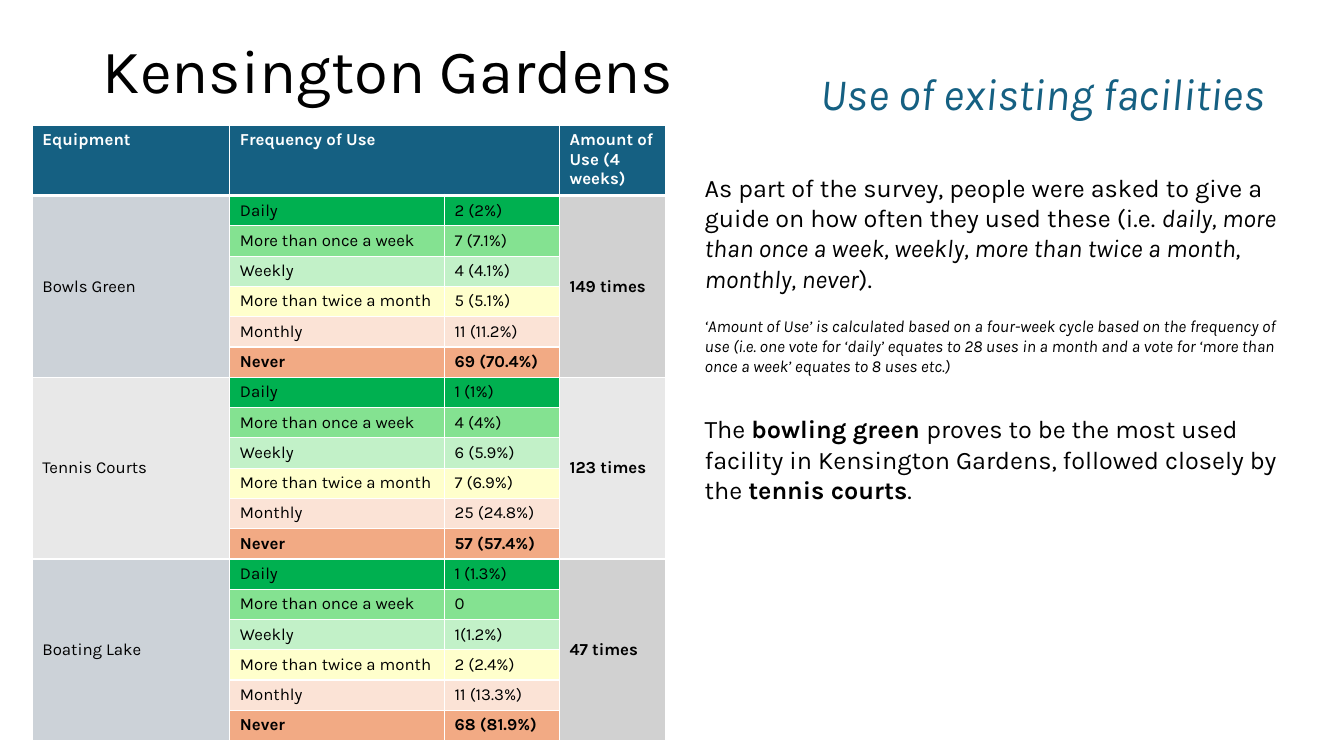
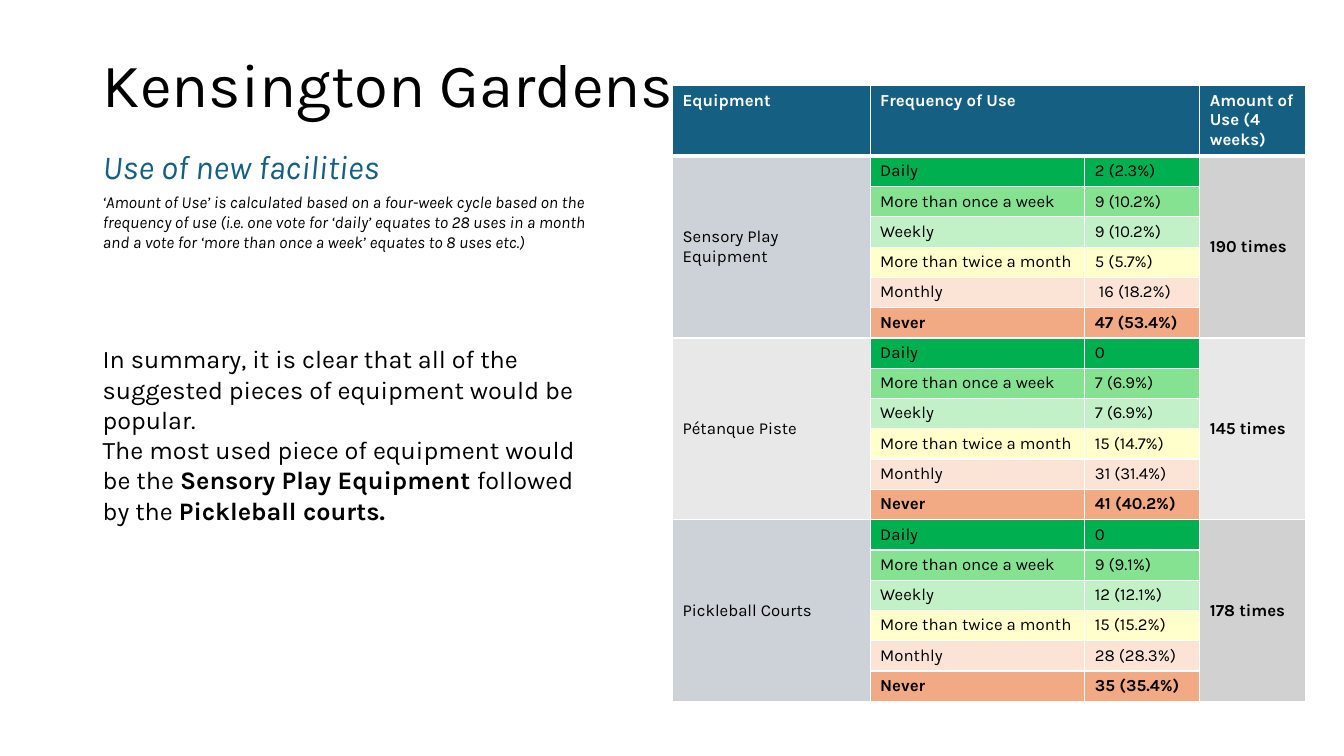
from lxml.etree import SubElement
from pptx import Presentation
from pptx.dml.color import RGBColor
from pptx.enum.text import MSO_ANCHOR
from pptx.oxml.ns import qn
from pptx.util import Inches, Pt

FONT = "Karla"
BLACK = RGBColor(0x00, 0x00, 0x00)
WHITE = RGBColor(0xFF, 0xFF, 0xFF)
BLUE = RGBColor(0x15, 0x60, 0x82)
# Fills of the equipment and amount cells, taken in turn by the groups
BANDS = [
    (RGBColor(0xCC, 0xD2, 0xD8), RGBColor(0xD1, 0xD1, 0xD1)),
    (RGBColor(0xE8, 0xE8, 0xE8), RGBColor(0xE8, 0xE8, 0xE8)),
]
LEVELS = [
    ("Daily", RGBColor(0x00, 0xB0, 0x50)),
    ("More than once a week", RGBColor(0x84, 0xE2, 0x91)),
    ("Weekly", RGBColor(0xC2, 0xF1, 0xC8)),
    ("More than twice a month", RGBColor(0xFF, 0xFF, 0xCC)),
    ("Monthly", RGBColor(0xFB, 0xE3, 0xD6)),
    ("Never", RGBColor(0xF2, 0xAA, 0x84)),
]
COLS = [1.96, 2.13, 1.14, 1.05]
HEAD, ROW = 0.69, 0.3
NOTE = (
    "‘Amount of Use’ is calculated based on a four-week cycle based on the "
    "frequency of use (i.e. one vote for ‘daily’ equates to 28 uses in a month "
    "and a vote for ‘more than once a week’ equates to 8 uses etc.)"
)
OLD = [
    ("Bowls Green", "149 times",
     ["2 (2%)", "7 (7.1%)", "4 (4.1%)", "5 (5.1%)", "11 (11.2%)", "69 (70.4%)"]),
    ("Tennis Courts", "123 times",
     ["1 (1%)", "4 (4%)", "6 (5.9%)", "7 (6.9%)", "25 (24.8%)", "57 (57.4%)"]),
    ("Boating Lake", "47 times",
     ["1 (1.3%)", "0", "1(1.2%)", "2 (2.4%)", "11 (13.3%)", "68 (81.9%)"]),
]
NEW = [
    ("Sensory Play Equipment", "190 times",
     ["2 (2.3%)", "9 (10.2%)", "9 (10.2%)", "5 (5.7%)", " 16 (18.2%)", "47 (53.4%)"]),
    ("Pétanque Piste", "145 times",
     ["0", "7 (6.9%)", "7 (6.9%)", "15 (14.7%)", "31 (31.4%)", "41 (40.2%)"]),
    ("Pickleball Courts", "178 times",
     ["0", "9 (9.1%)", "12 (12.1%)", "15 (15.2%)", "28 (28.3%)", "35 (35.4%)"]),
]


def write(frame, *paras, size=18, color=BLACK, bold=False, italic=False,
          gap=0, lines=None):
    """Fill a text frame; a paragraph is a string or a list of strings
    and (string, "b" or "i") pairs. gap is the space between paragraphs."""
    for i, runs in enumerate(paras):
        para = frame.paragraphs[0] if i == 0 else frame.add_paragraph()
        para.space_before = Pt(gap if i else 0)
        if lines:
            para.line_spacing = lines
        for part in [runs] if isinstance(runs, str) else runs:
            text, mark = (part, "") if isinstance(part, str) else part
            run = para.add_run()
            run.text = text
            font = run.font
            font.name, font.size = FONT, Pt(size)
            font.color.rgb = color
            font.bold = bold or mark == "b"
            font.italic = italic or mark == "i"


def add_text(slide, box, *paras, anchor=MSO_ANCHOR.TOP, **style):
    frame = slide.shapes.add_textbox(*map(Inches, box)).text_frame
    frame.word_wrap = True
    frame.vertical_anchor = anchor
    write(frame, *paras, **style)


def add_title(slide, top):
    add_text(slide, (0.92, top, 11.5, 1.45), "Kensington Gardens", size=44,
             lines=0.9, anchor=MSO_ANCHOR.MIDDLE)


def add_note(slide, box):
    add_text(slide, box, NOTE, size=12, italic=True)


def edge(cell, top=1, base=1):
    """Draw white cell borders; top and base are widths in points."""
    props = cell._tc.get_or_add_tcPr()
    for side, width in zip("LRTB", (1, 1, top, base)):
        line = SubElement(props, qn("a:ln" + side), w=str(Pt(width)))
        fill = SubElement(line, qn("a:solidFill"))
        SubElement(fill, qn("a:srgbClr"), val=str(WHITE))


def paint(cell, fill, text="", middle=False, **style):
    cell.fill.solid()
    cell.fill.fore_color.rgb = fill
    if middle:
        cell.vertical_anchor = MSO_ANCHOR.MIDDLE
    if text:
        write(cell.text_frame, text, size=12, **style)


def add_grid(slide, left, top, groups):
    """Place the frequency table with one group of rows per facility."""
    step = len(LEVELS)
    count = step * len(groups)
    grid = slide.shapes.add_table(
        count + 1, len(COLS), Inches(left), Inches(top),
        Inches(sum(COLS)), Inches(HEAD + ROW * count)).table
    for col, width in zip(grid.columns, COLS):
        col.width = Inches(width)
    for i, row in enumerate(grid.rows):
        row.height = Inches(ROW if i else HEAD)
        for cell in row.cells:
            edge(cell, top=3 if i == 1 else 1, base=1 if i else 3)

    heads = ["Equipment", "Frequency of Use", "", "Amount of Use (4 weeks)"]
    for col, text in enumerate(heads):
        paint(grid.cell(0, col), BLUE, text, color=WHITE, bold=True)
    grid.cell(0, 1).merge(grid.cell(0, 2))

    for i, (name, total, votes) in enumerate(groups):
        first = 1 + i * step
        shade, tone = BANDS[i % len(BANDS)]
        for j, ((level, fill), vote) in enumerate(zip(LEVELS, votes)):
            row = first + j
            last = level == "Never"
            paint(grid.cell(row, 0), shade, "" if j else name, middle=True)
            paint(grid.cell(row, 1), fill, level, bold=last)
            paint(grid.cell(row, 2), fill, vote, bold=last)
            paint(grid.cell(row, 3), tone, "" if j else total, middle=True,
                  bold=True)
        for col in (0, 3):
            grid.cell(first, col).merge(grid.cell(first + step - 1, col))


def build_old(slide):
    add_title(slide, 0)
    add_text(slide, (8.04, 0.6, 5.2, 0.64), "Use of existing facilities",
             size=32, color=BLUE, italic=True)
    add_text(
        slide, (6.89, 1.66, 6.12, 3.43),
        ["As part of the survey, people were asked to give a guide on how "
         "often they used these (i.e. ",
         ("daily, more than once a week, weekly, more than twice a month, "
          "monthly, never", "i"), ")."],
        ["The ", ("bowling green ", "b"),
         "proves to be the most used facility in Kensington Gardens, "
         "followed closely by the ", ("tennis courts", "b"), "."],
        gap=86)
    add_grid(slide, 0.32, 1.24, OLD)
    add_note(slide, (6.89, 3.08, 6.12, 0.71))


def build_new(slide):
    add_title(slide, 0.14)
    add_text(slide, (0.92, 1.4, 5.48, 0.5), "Use of new facilities",
             size=24, color=BLUE, italic=True)
    add_note(slide, (0.92, 1.85, 5.22, 0.71))
    add_grid(slide, 6.67, 0.85, NEW)
    add_text(
        slide, (0.92, 3.36, 4.94, 1.92),
        "In summary, it is clear that all of the suggested pieces of "
        "equipment would be popular.",
        ["The most used piece of equipment would be the ",
         ("Sensory Play Equipment ", "b"), "followed by the ",
         ("Pickleball courts.", "b")])


def main():
    deck = Presentation()
    deck.slide_width, deck.slide_height = Inches(13.33), Inches(7.5)
    for build in (build_old, build_new):
        build(deck.slides.add_slide(deck.slide_layouts[6]))
    deck.save("out.pptx")


if __name__ == "__main__":
    main()
